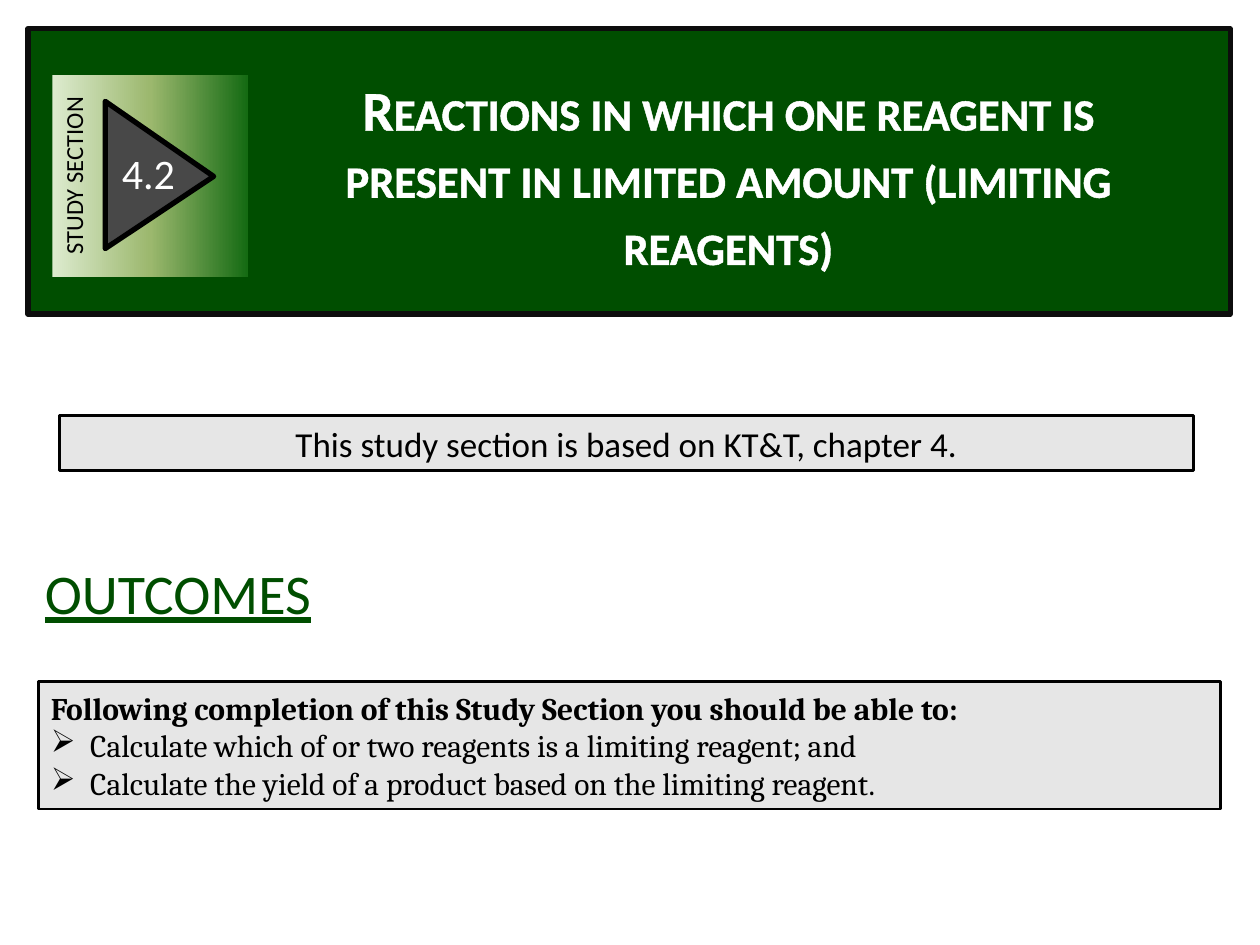
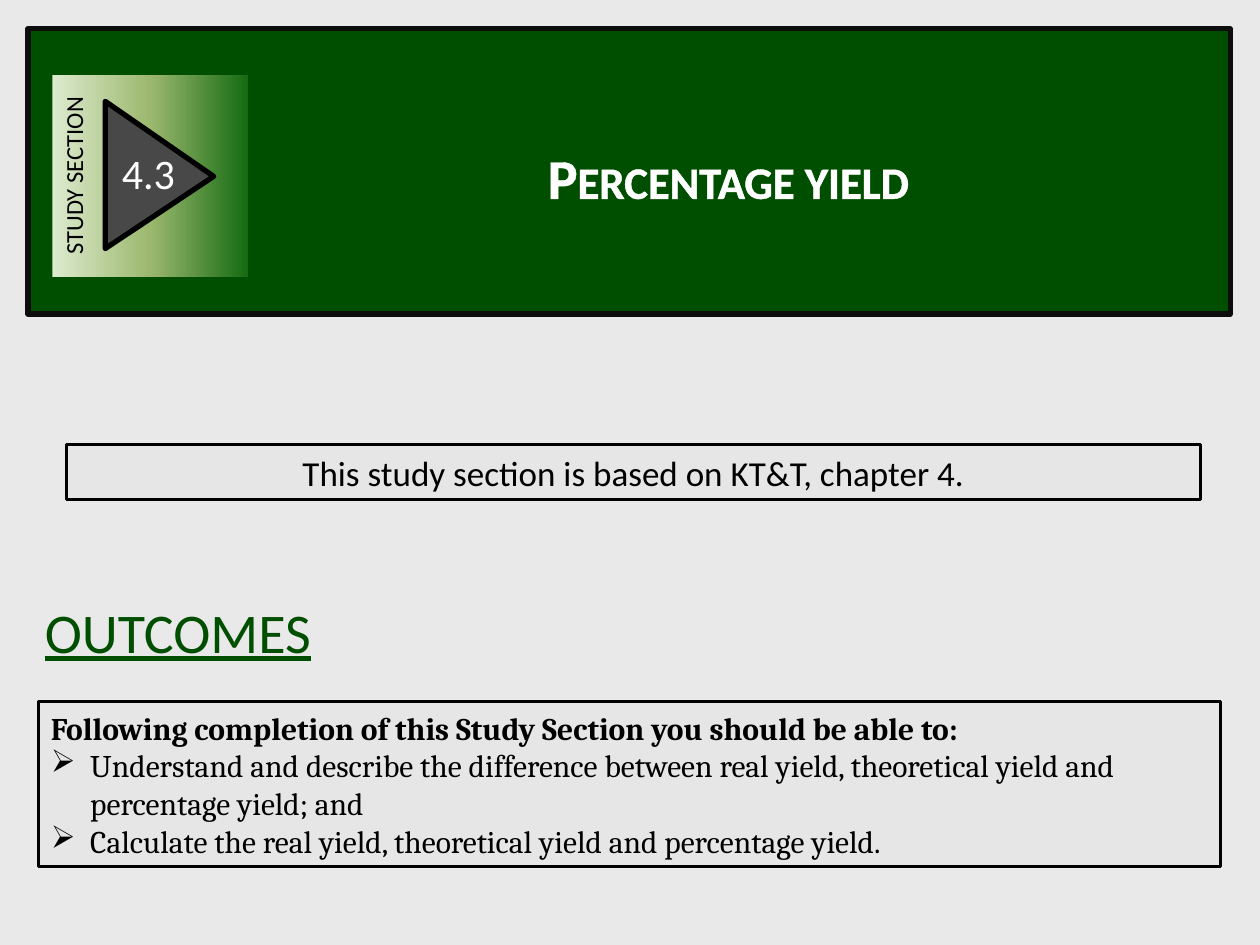
from copy import deepcopy

from pptx import Presentation
from pptx.dml.color import RGBColor
from pptx.enum.shapes import MSO_SHAPE
from pptx.enum.text import MSO_ANCHOR, MSO_AUTO_SIZE, PP_ALIGN
from pptx.oxml.ns import qn
from pptx.oxml.xmlchemy import OxmlElement
from pptx.util import Pt

WHITE = RGBColor(0xFF, 0xFF, 0xFF)
BLACK = RGBColor(0x00, 0x00, 0x00)
PALE_GREY = RGBColor(0xE9, 0xE9, 0xE9)
BOX_GREY = RGBColor(0xE6, 0xE6, 0xE6)
DARK_GREY = RGBColor(0x48, 0x48, 0x48)
BAND_GREEN = RGBColor(0x00, 0x4E, 0x00)
BAND_EDGE = RGBColor(0x0D, 0x0D, 0x0D)
BADGE_STOPS = [
    (0, RGBColor(0xDD, 0xEB, 0xCF)),
    (0.5, RGBColor(0x9C, 0xB8, 0x6E)),
    (1, RGBColor(0x15, 0x6B, 0x13)),
]

SANS = "Calibri"
SERIF = "Cambria"
TITLE_CENTRE = 101
BULLET_INDENT = 22.5

SECTIONS = [
    {
        "number": "4.2",
        "background": WHITE,
        "title": "Reactions in which one reagent is present in limited amount (limiting reagents)",
        "title_height": 124,
        "note_position": (34, 237.5),
        "heading_top": 315.5,
        "outcomes_top": 389.5,
        "outcomes_height": 72.7,
        "outcomes": [
            "Calculate which of or two reagents is a limiting reagent; and",
            "Calculate the yield of a product based on the limiting reagent.",
        ],
    },
    {
        "number": "4.3",
        "background": PALE_GREY,
        "title": "Percentage yield",
        "title_height": 46,
        "note_position": (38, 254),
        "heading_top": 337.7,
        "outcomes_top": 401,
        "outcomes_height": 94.3,
        "outcomes": [
            "Understand and describe the difference between real yield, "
            "theoretical yield and percentage yield; and",
            "Calculate the real yield, theoretical yield and percentage yield.",
        ],
    },
]


def points(*lengths):
    return [Pt(length) for length in lengths]


def add_run(paragraph, text, size, color=BLACK, name=SANS, bold=False):
    run = paragraph.add_run()
    run.text = text
    run.font.size = Pt(size)
    run.font.name = name
    run.font.bold = bold
    run.font.color.rgb = color
    return run


def outline_run(run, color, width):
    line = OxmlElement("a:ln")
    line.set("w", str(Pt(width)))
    fill = OxmlElement("a:solidFill")
    value = OxmlElement("a:srgbClr")
    value.set("val", str(color))
    fill.append(value)
    line.append(fill)
    run.font._element.insert(0, line)


def add_bullet(paragraph):
    properties = paragraph._p.get_or_add_pPr()
    properties.set("marL", str(Pt(BULLET_INDENT)))
    properties.set("indent", str(-Pt(BULLET_INDENT)))
    bullet = OxmlElement("a:buChar")
    bullet.set("char", "➢")
    properties.append(bullet)


def add_plain_shape(shapes, kind, box, fill=None, line=None, line_width=1.5):
    shape = shapes.add_shape(kind, *points(*box))
    shape.shadow.inherit = False
    if fill is not None:
        shape.fill.solid()
        shape.fill.fore_color.rgb = fill
    if line is None:
        shape.line.fill.background()
    else:
        shape.line.color.rgb = line
        shape.line.width = Pt(line_width)
    return shape


def add_text(shapes, box, text, size, color, wrap=True):
    text_box = shapes.add_textbox(*points(*box))
    text_box.text_frame.word_wrap = wrap
    return add_run(text_box.text_frame.paragraphs[0], text, size, color)


def add_title_band(slide, title, height):
    band = add_plain_shape(slide.shapes, MSO_SHAPE.RECTANGLE,
                           (16, 16.5, 687, 163), BAND_GREEN, BAND_EDGE, 3)
    placeholder = slide.shapes.title
    band.element.addnext(placeholder.element)
    placeholder.left, placeholder.top, placeholder.width, placeholder.height = points(
        152, TITLE_CENTRE - height / 2, 528.5, height)
    frame = placeholder.text_frame
    frame.word_wrap = True
    frame.auto_size = MSO_AUTO_SIZE.NONE
    frame.vertical_anchor = MSO_ANCHOR.TOP
    paragraph = frame.paragraphs[0]
    paragraph.alignment = PP_ALIGN.CENTER
    run = add_run(paragraph, title, 32, WHITE, bold=True)
    run.font._element.set("cap", "small")
    outline_run(run, WHITE, 0.75)


def fill_badge(badge):
    badge.fill.gradient()
    badge.fill.gradient_angle = 270
    stop_list = badge.element.spPr.find(qn("a:gradFill")).find(qn("a:gsLst"))
    stop_list.append(deepcopy(stop_list[0]))
    for stop, (position, color) in zip(badge.fill.gradient_stops, BADGE_STOPS):
        stop.position = position
        stop.color.rgb = color


def add_section_badge(slide, number):
    shapes = slide.shapes.add_group_shape().shapes
    badge = add_plain_shape(shapes, MSO_SHAPE.RECTANGLE, (28.2, 44.6, 115.2, 111.6))
    badge.rotation = 270
    fill_badge(badge)
    badge.text_frame.vertical_anchor = MSO_ANCHOR.TOP
    paragraph = badge.text_frame.paragraphs[0]
    paragraph.alignment = PP_ALIGN.CENTER
    add_run(paragraph, "STUDY SECTION", 14)
    arrow = add_plain_shape(shapes, MSO_SHAPE.ISOSCELES_TRIANGLE,
                            (49, 69, 84.2, 62), DARK_GREY, BLACK, 3)
    arrow.rotation = 90
    arrow.adjustments[0] = 0.51
    add_text(shapes, (62.6, 80.6, 45.4, 36), number, 24, WHITE, wrap=False)


def add_info_box(slide, box):
    shape = add_plain_shape(slide.shapes, MSO_SHAPE.RECTANGLE, box, BOX_GREY, BLACK)
    shape.text_frame.word_wrap = True
    shape.text_frame.vertical_anchor = MSO_ANCHOR.MIDDLE
    return shape.text_frame


def add_source_note(slide, position):
    paragraph = add_info_box(slide, (*position, 648, 31.5)).paragraphs[0]
    paragraph.alignment = PP_ALIGN.CENTER
    add_run(paragraph, "This study section is based on KT&T, chapter 4.", 20)


def add_heading(slide, top):
    run = add_text(slide.shapes, (18.5, top, 192, 46), "OUTCOMES", 32, BAND_GREEN)
    run.font.underline = True
    outline_run(run, BLACK, 0.25)


def add_outcomes(slide, top, height, outcomes):
    frame = add_info_box(slide, (22, top, 675.5, height))
    introduction = frame.paragraphs[0]
    introduction.alignment = PP_ALIGN.LEFT
    add_run(introduction, "Following completion of this Study Section you should be able to:",
            18, name=SERIF, bold=True)
    for outcome in outcomes:
        paragraph = frame.add_paragraph()
        paragraph.alignment = PP_ALIGN.LEFT
        add_bullet(paragraph)
        add_run(paragraph, outcome, 18, name=SERIF)


def add_section_slide(presentation, section):
    slide = presentation.slides.add_slide(presentation.slide_layouts[5])
    slide.background.fill.solid()
    slide.background.fill.fore_color.rgb = section["background"]
    add_source_note(slide, section["note_position"])
    add_title_band(slide, section["title"], section["title_height"])
    add_section_badge(slide, section["number"])
    add_heading(slide, section["heading_top"])
    add_outcomes(slide, section["outcomes_top"], section["outcomes_height"],
                 section["outcomes"])


def main():
    presentation = Presentation()
    presentation.slide_width, presentation.slide_height = points(720, 540)
    for section in SECTIONS:
        add_section_slide(presentation, section)
    presentation.save("out.pptx")


if __name__ == "__main__":
    main()
